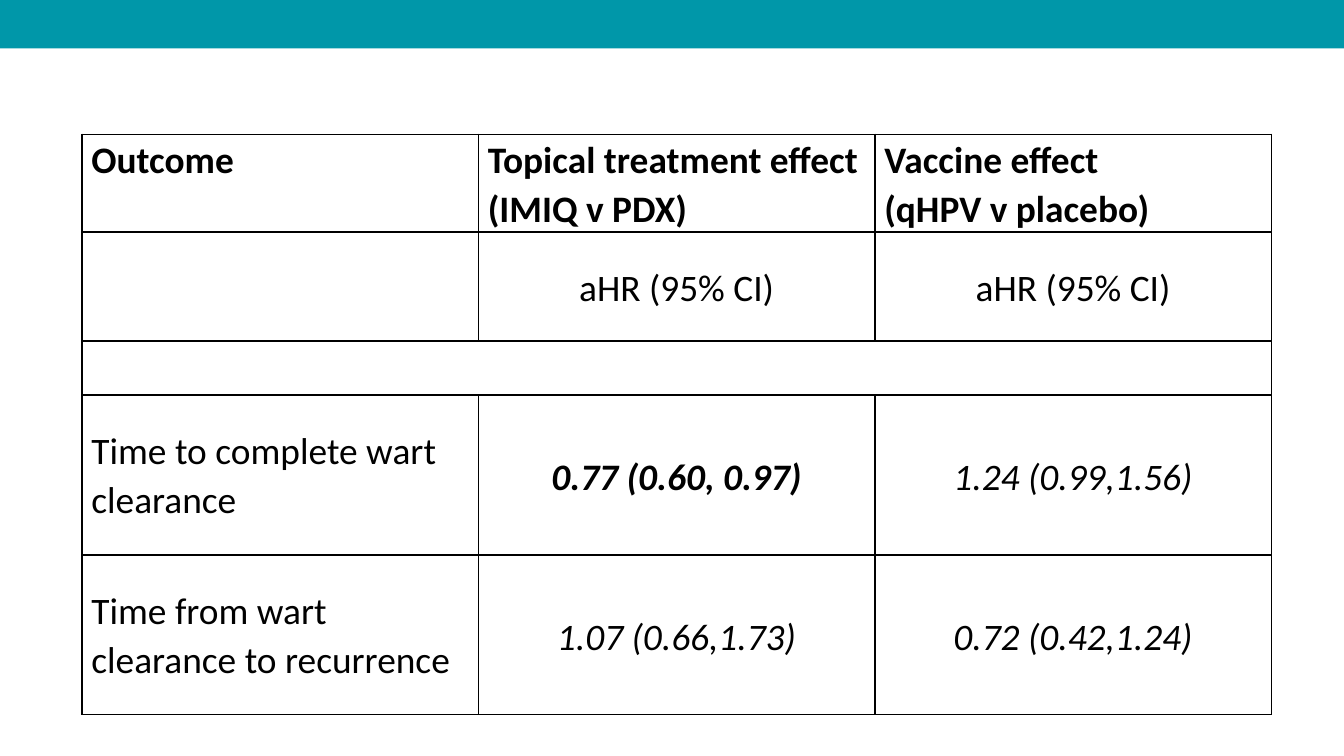
"""Build a slide with a table of treatment and vaccine effects on wart outcomes."""
from lxml.etree import SubElement
from pptx import Presentation
from pptx.dml.color import RGBColor
from pptx.enum.shapes import MSO_SHAPE
from pptx.enum.text import MSO_ANCHOR, PP_ALIGN
from pptx.oxml.ns import qn
from pptx.util import Inches, Pt

TEAL = RGBColor(0x00, 0x97, 0xA9)
BLACK = RGBColor(0, 0, 0)
WHITE = RGBColor(0xFF, 0xFF, 0xFF)

HEADER = dict(bold=True, anchor=MSO_ANCHOR.TOP)
LABEL = dict()
UNIT = dict(align=PP_ALIGN.CENTER)
RESULT = dict(align=PP_ALIGN.CENTER, italic=True, spacing=1.15)
STRONG = dict(RESULT, bold=True)

ROWS = [
    (0.72, [(["Outcome"], HEADER),
            (["Topical treatment effect (IMIQ v PDX)"], HEADER),
            (["Vaccine effect", "(qHPV v placebo)"], HEADER)]),
    (0.81, [([], LABEL), (["aHR (95% CI)"], UNIT), (["aHR (95% CI)"], UNIT)]),
    (0.4, [([], LABEL)] * 3),
    (1.19, [(["Time to complete wart clearance"], LABEL),
            (["0.77 (0.60, 0.97)"], STRONG),
            (["1.24 (0.99,1.56)"], RESULT)]),
    (1.19, [(["Time from wart clearance to recurrence"], LABEL),
            (["1.07 (0.66,1.73)"], RESULT),
            (["0.72 (0.42,1.24)"], RESULT)]),
]
DIVIDER_ROW = 2
COLUMN_WIDTH = 2.95


def draw_borders(cell):
    properties = cell._tc.get_or_add_tcPr()
    for side in ("lnL", "lnR", "lnT", "lnB"):
        line = SubElement(properties, qn(f"a:{side}"), w=str(Pt(1)))
        fill = SubElement(line, qn("a:solidFill"))
        SubElement(fill, qn("a:srgbClr"), val=str(BLACK))


def fill_cell(cell, lines, bold=False, italic=False, align=PP_ALIGN.LEFT,
              anchor=MSO_ANCHOR.MIDDLE, spacing=1.07):
    draw_borders(cell)
    cell.fill.background()
    cell.margin_left = cell.margin_right = Inches(0.07)
    cell.margin_top = cell.margin_bottom = 0
    cell.vertical_anchor = anchor
    frame = cell.text_frame
    for index, text in enumerate(lines):
        para = frame.add_paragraph() if index else frame.paragraphs[0]
        para.alignment = align
        para.line_spacing = spacing
        span = para.add_run()
        span.text = text
        span.font.name = "Calibri"
        span.font.size = Pt(20)
        span.font.bold = bold
        span.font.italic = italic
        span.font.color.rgb = BLACK


def main():
    deck = Presentation()
    deck.slide_width = Inches(10)
    deck.slide_height = deck.slide_width * 9 // 16
    page = deck.slides.add_slide(deck.slide_layouts[6])
    page.background.fill.solid()
    page.background.fill.fore_color.rgb = WHITE

    band = page.shapes.add_shape(MSO_SHAPE.RECTANGLE, 0, 0, deck.slide_width, Inches(0.36))
    band.shadow.inherit = False
    band.fill.solid()
    band.fill.fore_color.rgb = TEAL
    band.line.fill.background()

    column_count = len(ROWS[0][1])
    table = page.shapes.add_table(
        len(ROWS), column_count, Inches(0.61), Inches(1),
        Inches(COLUMN_WIDTH * column_count), Inches(sum(height for height, _ in ROWS))).table
    table.first_row = table.horz_banding = False
    for column in table.columns:
        column.width = Inches(COLUMN_WIDTH)
    for row_index, (height, cells) in enumerate(ROWS):
        table.rows[row_index].height = Inches(height)
        for column_index, (lines, style) in enumerate(cells):
            fill_cell(table.cell(row_index, column_index), lines, **style)
    table.cell(DIVIDER_ROW, 0).merge(table.cell(DIVIDER_ROW, column_count - 1))

    deck.save("out.pptx")


if __name__ == "__main__":
    main()
